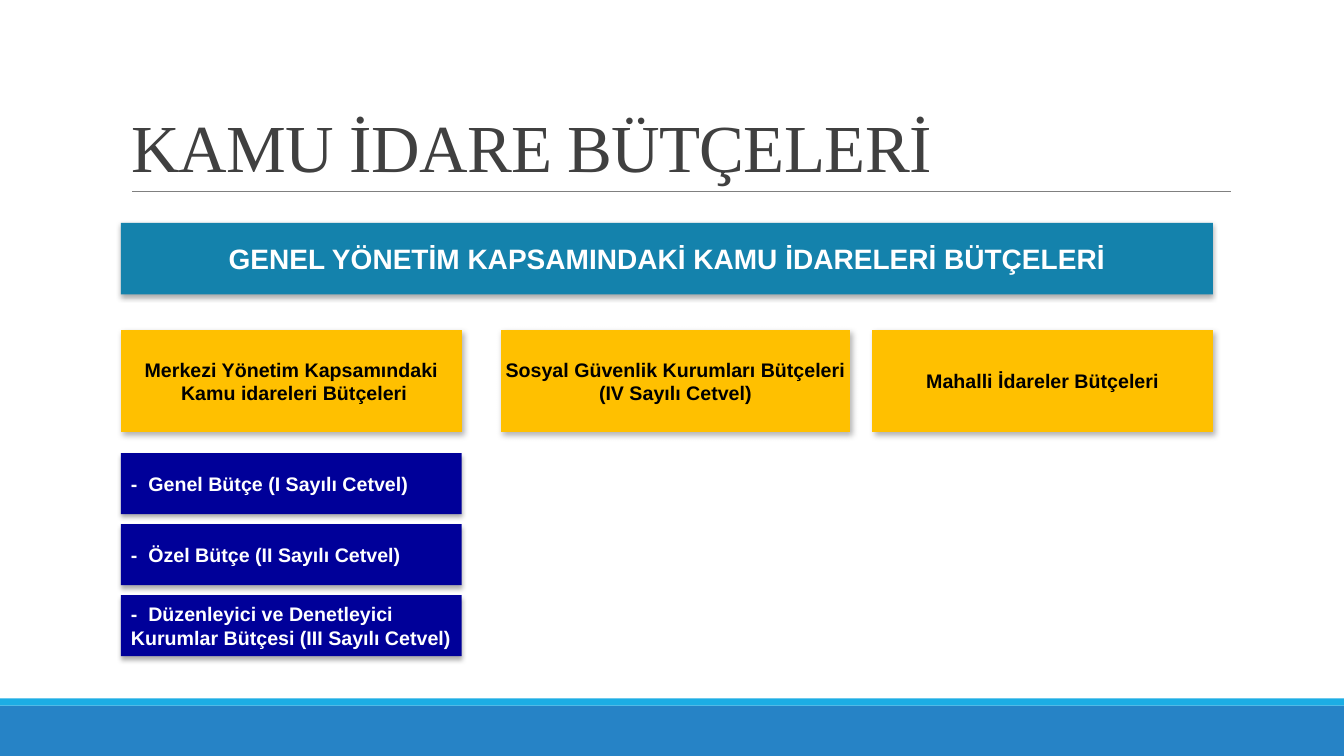
from dataclasses import dataclass

from pptx import Presentation
from pptx import util as u
from pptx.dml.color import RGBColor
from pptx.enum import shapes, text
from pptx.oxml import parse_xml
from pptx.oxml.ns import nsdecls
from pptx.oxml.xmlchemy import OxmlElement

WHITE = RGBColor(0xFF, 0xFF, 0xFF)
BLACK = RGBColor(0, 0, 0)
GRAY = RGBColor(0x80, 0x80, 0x80)
DARK = RGBColor(0x40, 0x40, 0x40)
BLUE = RGBColor(0x26, 0x83, 0xC6)
CYAN = RGBColor(0x1C, 0xAD, 0xE4)
TEAL = RGBColor(0x14, 0x82, 0xAC)
GOLD = RGBColor(0xFF, 0xC0, 0x00)
NAVY = RGBColor(0x00, 0x00, 0x99)

# The grid has ten columns and ten rows to the inch
COLS, ROWS = 133.3, 75
LEFT, SIDE = 12, 33.8
RECT = shapes.MSO_SHAPE.RECTANGLE
FLOW = shapes.MSO_SHAPE.FLOWCHART_PROCESS
MID = text.PP_ALIGN.CENTER


@dataclass
class Shade:
    alpha: int
    blur: float
    dist: float
    angle: int


@dataclass
class Box:
    col: float
    row: float
    wide: float
    high: float
    fill: RGBColor
    lines: tuple[str, ...] = ()
    size: int = 14
    ink: RGBColor = WHITE
    align: text.PP_ALIGN = MID
    kind: shapes.MSO_SHAPE = RECT
    shade: Shade | None = None


SOFT = Shade(30, 4.5, 2.6, 53)
DROP = Shade(32, 3.5, 2.2, 90)


def cell(count: float) -> int:
    return u.Inches(count / 10)


def write(frame, *lines: str, size: int, ink: RGBColor, font: str = "Arial",
          bold: bool = True, align=None, space=None, track: int = 0,
          anchor=text.MSO_ANCHOR.MIDDLE, wrap: bool = False) -> None:
    frame.word_wrap = wrap
    frame.auto_size = text.MSO_AUTO_SIZE.NONE
    frame.vertical_anchor = anchor
    for i, line in enumerate(lines):
        para = frame.add_paragraph() if i else frame.paragraphs[0]
        para.alignment = align
        para.line_spacing = space
        run = para.add_run()
        run.text = line
        run.font.name, run.font.size = font, u.Pt(size)
        run.font.bold, run.font.color.rgb = bold, ink
        if track:
            run.font._element.set("spc", str(track))


def cast(shape, shade: Shade) -> None:
    """Give the shape an outer shadow."""
    glow = parse_xml(
        f'<a:effectLst {nsdecls("a")}><a:outerShdw blurRad="{u.Pt(shade.blur)}" '
        f'dist="{u.Pt(shade.dist)}" dir="{shade.angle * 60000}" algn="ctr" '
        f'rotWithShape="0"><a:srgbClr val="{BLACK}">'
        f'<a:alpha val="{shade.alpha * 1000}"/></a:srgbClr>'
        '</a:outerShdw></a:effectLst>')
    old = shape._element.spPr.find(glow.tag)
    shape._element.spPr.replace(old, glow)


def draw(slide, box: Box) -> None:
    shape = slide.shapes.add_shape(
        box.kind, *map(cell, (box.col, box.row, box.wide, box.high)))
    shape.shadow.inherit = False
    shape.fill.solid()
    shape.fill.fore_color.rgb = box.fill
    shape.line.fill.background()
    if box.shade:
        cast(shape, box.shade)
    if box.lines:
        write(shape.text_frame, *box.lines, size=box.size, ink=box.ink,
              align=box.align)


def rule(slide, start: float, end: float, row: float) -> None:
    line = slide.shapes.add_connector(
        shapes.MSO_CONNECTOR.STRAIGHT, *map(cell, (start, row, end, row)))
    line.line.color.rgb = GRAY
    line.line.width = u.Pt(0.5)
    line._element.spPr.append(OxmlElement("a:effectLst"))


def main() -> None:
    deck = Presentation()
    deck.slide_width, deck.slide_height = cell(COLS), cell(ROWS)
    slide = deck.slides.add_slide(deck.slide_layouts[5])

    # Footer bands and title rule
    draw(slide, Box(0, 70, COLS, 5, BLUE))
    draw(slide, Box(0, 69.3, COLS, 0.7, CYAN))
    rule(slide, 13.1, 122.1, 19)

    # Title
    title = slide.shapes.title
    title.left, title.top, title.width, title.height = map(
        cell, (LEFT, 3.1, 110, 15.9))
    write(title.text_frame, "KAMU İDARE BÜTÇELERİ", size=48, ink=DARK,
          font="Times New Roman", bold=False, align=text.PP_ALIGN.LEFT,
          space=0.85, track=-50, anchor=text.MSO_ANCHOR.BOTTOM, wrap=True)

    # Three budget groups
    groups = (
        (LEFT, SIDE, ("Merkezi Yönetim Kapsamındaki",
                      " Kamu idareleri Bütçeleri")),
        (49.7, 34.6, ("Sosyal Güvenlik Kurumları Bütçeleri",
                      "(IV Sayılı Cetvel)")),
        (86.5, SIDE, ("Mahalli İdareler Bütçeleri",)),
    )
    for col, wide, lines in groups:
        draw(slide, Box(col, 32.7, wide, 10.2, GOLD, lines, ink=BLACK,
                        kind=FLOW, shade=SOFT))

    # Budgets of the central government
    parts = (
        ("-  Genel Bütçe (I Sayılı Cetvel)",),
        ("-  Özel Bütçe (II Sayılı Cetvel)",),
        ("-  Düzenleyici ve Denetleyici",
         "Kurumlar Bütçesi (III Sayılı Cetvel)"),
    )
    for i, lines in enumerate(parts):
        draw(slide, Box(LEFT, 44.95 + 7.05 * i, SIDE, 6.05, NAVY, lines,
                        align=text.PP_ALIGN.LEFT, shade=DROP))

    # Heading bar
    draw(slide, Box(LEFT, 22.1, 108.3, 7.1, TEAL,
                    ("GENEL YÖNETİM KAPSAMINDAKİ KAMU İDARELERİ BÜTÇELERİ",),
                    size=20, shade=DROP))
    deck.save("out.pptx")


if __name__ == "__main__":
    main()
